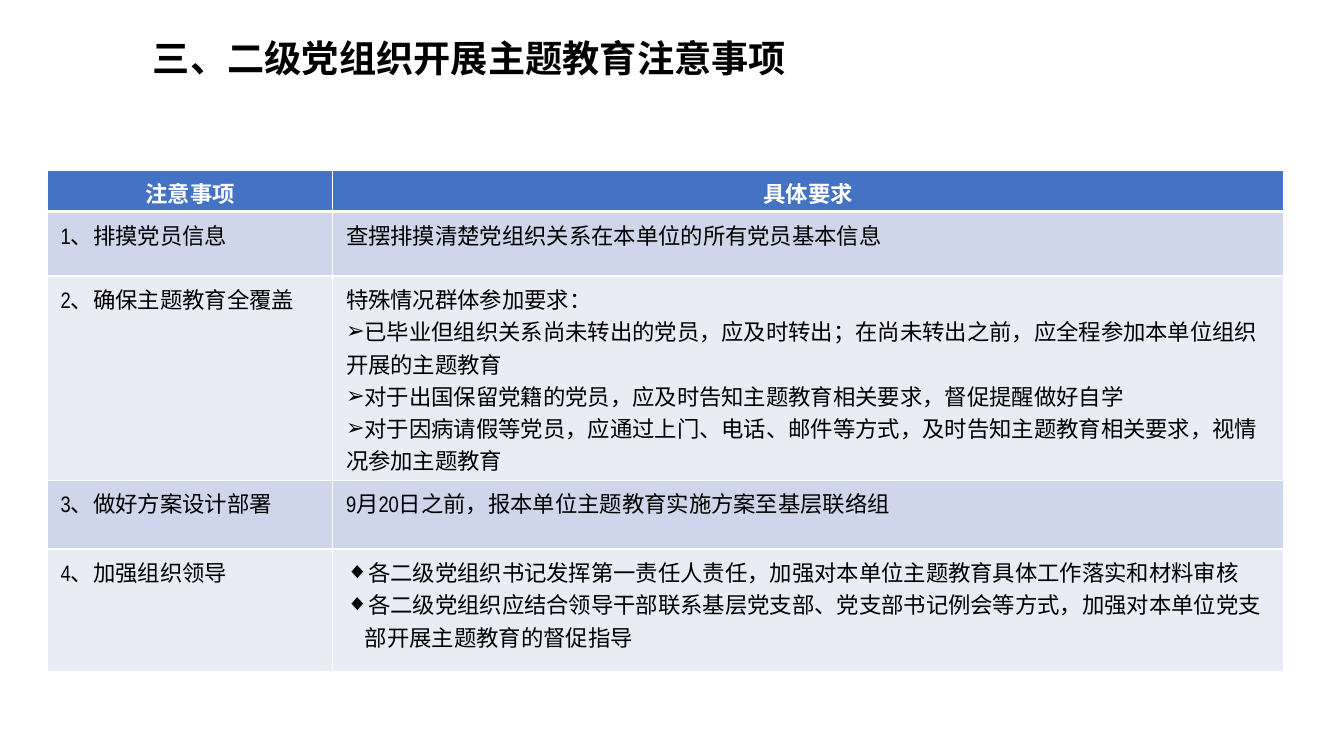
import dataclasses
import typing

import lxml.etree
import pptx
import pptx.dml.color
import pptx.enum.text
import pptx.oxml.ns
import pptx.slide
import pptx.table
import pptx.text.text
import pptx.util

Pt = pptx.util.Pt
qn = pptx.oxml.ns.qn
RGB = pptx.dml.color.RGBColor.from_string
ALIGN = pptx.enum.text.PP_ALIGN


@dataclasses.dataclass(frozen=True)
class Theme:
    black: str = "000000"
    white: str = "FFFFFF"
    header_fill: str = "4472C4"
    band_fills: tuple[str, str] = ("CFD5EA", "E9EBF5")
    title_size: float = 26.6
    body_size: float = 16
    latin_font: str = "Arial Narrow"
    chinese_font: str = "Noto Sans CJK SC"
    thin_border: float = 1
    header_border: float = 3


@dataclasses.dataclass(frozen=True)
class Line:
    text: str
    bullet: str = ""
    hanging: float = 0


@dataclasses.dataclass(frozen=True)
class Row:
    height: float
    item: str
    requirements: tuple[Line, ...]


THEME = Theme()
COLUMN_WIDTHS = (203.8, 679.2)
ARROW, DIAMOND, HANGING = "➢", "◆", 13.5
ROWS = (
    Row(29.5, "注意事项", (Line("具体要求"),)),
    Row(46, "1、排摸党员信息", (Line("查摆排摸清楚党组织关系在本单位的所有党员基本信息"),)),
    Row(146, "2、确保主题教育全覆盖", (
        Line("特殊情况群体参加要求："),
        Line("已毕业但组织关系尚未转出的党员，应及时转出；在尚未转出之前，应全程参加本单位组织开展的主题教育", ARROW),
        Line("对于出国保留党籍的党员，应及时告知主题教育相关要求，督促提醒做好自学", ARROW),
        Line("对于因病请假等党员，应通过上门、电话、邮件等方式，及时告知主题教育相关要求，视情况参加主题教育", ARROW),
    )),
    Row(49, "3、做好方案设计部署", (Line("9月20日之前，报本单位主题教育实施方案至基层联络组"),)),
    Row(87.5, "4、加强组织领导", (
        Line("各二级党组织书记发挥第一责任人责任，加强对本单位主题教育具体工作落实和材料审核", DIAMOND, HANGING),
        Line("各二级党组织应结合领导干部联系基层党支部、党支部书记例会等方式，加强对本单位党支部开展主题教育的督促指导",
             DIAMOND, HANGING),
    )),
)


def set_format(target: typing.Any, values: dict[str, typing.Any]) -> None:
    for name, value in values.items():
        setattr(target, name, value)


def add_span(para: pptx.text.text._Paragraph, text: str, color: str, **font: typing.Any) -> None:
    """Add a run whose Chinese characters use the theme's Chinese font."""
    span = para.add_run()
    span.text = text
    set_format(span.font, font)
    span.font.color.rgb = RGB(color)
    lxml.etree.SubElement(span._r.get_or_add_rPr(), qn("a:ea"), typeface=THEME.chinese_font)


def add_bullet(para: pptx.text.text._Paragraph, line: Line) -> None:
    properties = para._p.get_or_add_pPr()
    properties.set("marL", str(Pt(line.hanging)))
    properties.set("indent", str(-Pt(line.hanging)))
    lxml.etree.SubElement(properties, qn("a:buFont"), typeface="Arial")
    lxml.etree.SubElement(properties, qn("a:buChar"), char=line.bullet)


def add_borders(cell: pptx.table._Cell, top: float, bottom: float) -> None:
    widths = {"L": THEME.thin_border, "R": THEME.thin_border, "T": top, "B": bottom}
    for side, width in widths.items():
        border = lxml.etree.SubElement(cell._tc.get_or_add_tcPr(), qn(f"a:ln{side}"), w=str(Pt(width)))
        fill = lxml.etree.SubElement(border, qn("a:solidFill"))
        lxml.etree.SubElement(fill, qn("a:srgbClr"), val=THEME.white)


def fill_cell(cell: pptx.table._Cell, lines: tuple[Line, ...], row_index: int) -> None:
    header = row_index == 0
    set_format(cell, {
        "margin_left": Pt(9.4), "margin_right": Pt(9.4),
        "margin_top": Pt(4.8), "margin_bottom": Pt(4.8),
    })
    add_borders(
        cell,
        top=THEME.header_border if row_index == 1 else THEME.thin_border,
        bottom=THEME.header_border if header else THEME.thin_border,
    )
    cell.fill.solid()
    cell.fill.fore_color.rgb = RGB(THEME.header_fill if header else THEME.band_fills[(row_index - 1) % 2])
    for index, line in enumerate(lines):
        para = cell.text_frame.paragraphs[0] if index == 0 else cell.text_frame.add_paragraph()
        para.alignment = ALIGN.CENTER if header else ALIGN.LEFT
        if line.bullet:
            add_bullet(para, line)
        add_span(para, line.text, THEME.white if header else THEME.black,
                 name=THEME.latin_font, size=Pt(THEME.body_size), bold=header)


def add_title(page: pptx.slide.Slide, text: str) -> None:
    box = page.shapes.add_textbox(Pt(102.2), Pt(21.6), Pt(652.3), Pt(39.6))
    set_format(box.text_frame, {
        "word_wrap": True,
        "auto_size": pptx.enum.text.MSO_AUTO_SIZE.SHAPE_TO_FIT_TEXT,
    })
    add_span(box.text_frame.paragraphs[0], text, THEME.black,
             name=THEME.chinese_font, size=Pt(THEME.title_size), bold=True)


def add_requirements_table(page: pptx.slide.Slide) -> None:
    table = page.shapes.add_table(
        len(ROWS), len(COLUMN_WIDTHS), Pt(34), Pt(121.7),
        Pt(sum(COLUMN_WIDTHS)), Pt(sum(row.height for row in ROWS)),
    ).table
    set_format(table, {"first_row": False, "horz_banding": False})
    for column, width in zip(table.columns, COLUMN_WIDTHS):
        column.width = Pt(width)
    for row_index, row in enumerate(ROWS):
        table.rows[row_index].height = Pt(row.height)
        for column_index, lines in enumerate(((Line(row.item),), row.requirements)):
            fill_cell(table.cell(row_index, column_index), lines, row_index)


def main() -> None:
    deck = pptx.Presentation()
    set_format(deck, {"slide_width": Pt(960), "slide_height": Pt(540)})
    page = deck.slides.add_slide(deck.slide_layouts[6])
    add_title(page, "三、二级党组织开展主题教育注意事项")
    add_requirements_table(page)
    deck.save("out.pptx")


if __name__ == "__main__":
    main()
